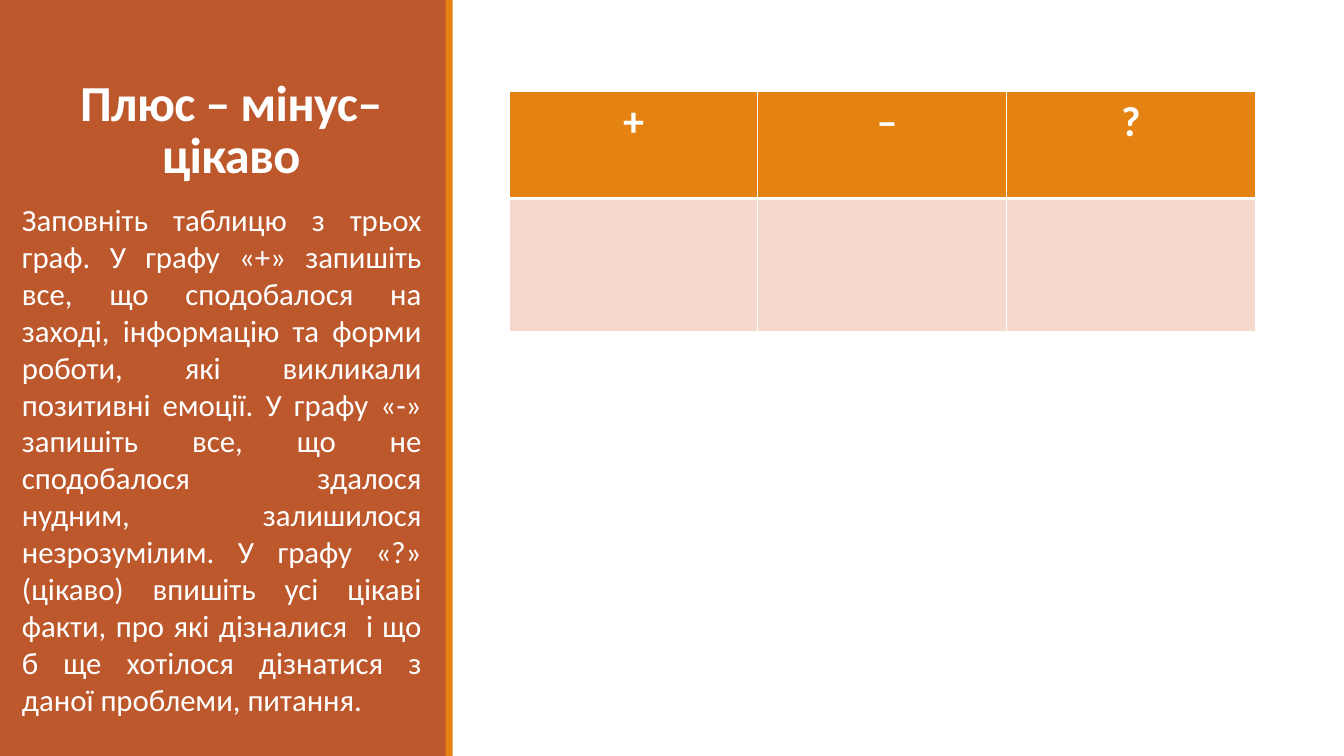
from lxml.etree import SubElement
from pptx import Presentation
from pptx.dml.color import RGBColor
from pptx.enum.shapes import MSO_SHAPE
from pptx.enum.text import MSO_ANCHOR, PP_ALIGN
from pptx.oxml.ns import qn
from pptx.util import Inches, Pt

COLORS = {"panel": "BD582C", "accent": "E48312", "cell": "F5D9CC", "white": "FFFFFF"}
TITLE = "Плюс – мінус–\vцікаво"
TASK = (
    "Заповніть таблицю з трьох граф. У графу «+» запишіть все, що сподобалося "
    "на заході, інформацію та форми роботи, які викликали позитивні емоції. "
    "У графу «-» запишіть все, що не сподобалося  здалося нудним, залишилося "
    "незрозумілим. У графу «?» (цікаво) впишіть усі цікаві факти, про які "
    "дізналися  і що б ще хотілося дізнатися з даної проблеми, питання."
)
HEADERS = ["+", " –", "?"]
ROW_HEIGHTS = [1.06, 1.32]


def rgb(name):
    return RGBColor.from_string(COLORS[name])


def set_text(tf, text, size, align, bold=False, **paragraph_format):
    p = tf.paragraphs[0]
    p.text = text
    for name, value in {"alignment": align, **paragraph_format}.items():
        setattr(p, name, value)
    for r in p.runs:
        for name, value in {"name": "Calibri", "size": Pt(size), "bold": bold}.items():
            setattr(r.font, name, value)
        r.font.color.rgb = rgb("white")
    return p


def add_bar(s, left, width, color):
    sp = s.shapes.add_shape(
        MSO_SHAPE.RECTANGLE, Inches(left), 0, Inches(width), Inches(7.5)
    )
    sp.shadow.inherit = False
    sp.fill.solid()
    sp.fill.fore_color.rgb = rgb(color)
    sp.line.fill.background()


def add_text(s, box, text, size, align, anchor=MSO_ANCHOR.TOP, **text_format):
    tf = s.shapes.add_textbox(*map(Inches, box)).text_frame
    tf.word_wrap = True
    tf.vertical_anchor = anchor
    return set_text(tf, text, size, align, **text_format)


def set_borders(cell, widths):
    tcPr = cell._tc.get_or_add_tcPr()
    for i, (side, width) in enumerate(widths.items()):
        ln = SubElement(tcPr, qn(f"a:ln{side}"), w=str(Pt(width)))
        fill = SubElement(ln, qn("a:solidFill"))
        SubElement(fill, qn("a:srgbClr"), val=COLORS["white"])
        tcPr.insert(i, ln)


def add_feedback_table(s):
    table = s.shapes.add_table(
        len(ROW_HEIGHTS), len(HEADERS),
        Inches(5.05), Inches(0.91), Inches(7.4), Inches(sum(ROW_HEIGHTS)),
    ).table
    for row, height in zip(table.rows, ROW_HEIGHTS):
        row.height = Inches(height)
    for col, header in enumerate(HEADERS):
        set_text(table.cell(0, col).text_frame, header, 30, PP_ALIGN.CENTER, bold=True)
        for row, (color, top, bottom) in enumerate([("accent", 1, 3), ("cell", 3, 1)]):
            cell = table.cell(row, col)
            cell.fill.solid()
            cell.fill.fore_color.rgb = rgb(color)
            set_borders(cell, {"L": 1, "R": 1, "T": top, "B": bottom})


def main():
    prs = Presentation()
    prs.slide_width, prs.slide_height = Inches(13.33), Inches(7.5)
    s = prs.slides.add_slide(prs.slide_layouts[6])
    add_bar(s, 0, 4.43, "panel")
    add_bar(s, 4.42, 0.07, "accent")
    title = add_text(
        s, (0.28, 0.57, 4.03, 1.3), TITLE, 36, PP_ALIGN.CENTER,
        MSO_ANCHOR.BOTTOM, bold=True, line_spacing=0.85,
    )
    for r in title.runs:
        r.font._element.set("spc", "-50")
    add_text(s, (0.12, 1.94, 4.16, 5.4), TASK, 22, PP_ALIGN.JUSTIFY)
    add_feedback_table(s)
    prs.save("out.pptx")


if __name__ == "__main__":
    main()
